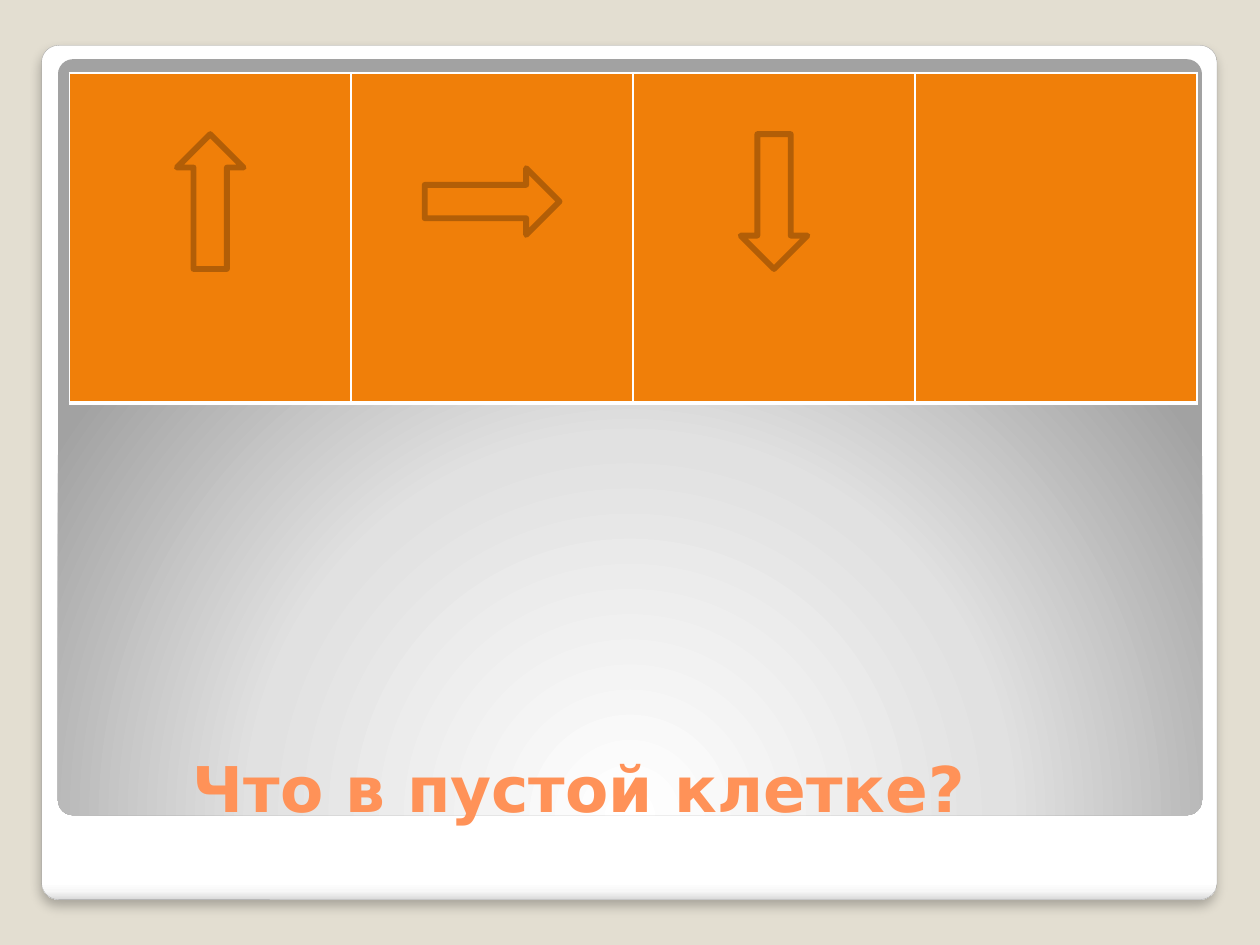
from dataclasses import dataclass

from lxml import etree
from pptx import Presentation
from pptx import util as u
from pptx.dml.color import RGBColor
from pptx.enum import shapes, text
from pptx.oxml.ns import qn


@dataclass(frozen=True)
class Theme:
    backdrop: str = "E3DED1"
    card_edge: str = "A4A4A4"
    card: tuple = ((0, "FFFFFF"), (98, "FFFFFF"), (99, "F7F7F7"), (100, "DADADA"))
    panel: tuple = ((0, "FFFFFF"), (55, "E1E1E1"), (100, "A2A2A2"))
    cell: str = "F07F09"
    border: str = "FFFFFF"
    arrow_edge: str = "B25E07"
    title: str = "FF9258"
    font: str = "DejaVu Sans"
    title_size: int = 36
    arrow_width: float = 3.35


def node(parent, tag, **attributes):
    return etree.SubElement(parent, qn(tag), {k: str(v) for k, v in attributes.items()})


class PuzzleSlide:
    """Places elements on a slide using a grid of 100 columns by 75 rows."""

    def __init__(self, deck, theme):
        self.theme = theme
        self.column, self.row = deck.slide_width / 100, deck.slide_height / 75
        self.slide = deck.slides.add_slide(deck.slide_layouts[5])
        self.backdrop = self.slide.background.fill
        self.backdrop.solid()
        self.backdrop.fore_color.rgb = RGBColor.from_string(theme.backdrop)

    def box(self, left, top, width, height):
        return (u.Emu(round(left * self.column)), u.Emu(round(top * self.row)),
                u.Emu(round(width * self.column)), u.Emu(round(height * self.row)))

    def shape(self, kind, place, fill=None, edge=None, edge_width=0):
        item = self.slide.shapes.add_shape(kind, *self.box(*place))
        item.shadow.inherit = False
        if fill:
            item.fill.solid()
            item.fill.fore_color.rgb = RGBColor.from_string(fill)
        else:
            item.fill.background()
        if edge:
            item.line.color.rgb = RGBColor.from_string(edge)
            item.line.width = u.Pt(edge_width)
        else:
            item.line.fill.background()
        return item

    def backing(self, place, stops, circular=False, edge=None, shadow=False):
        item = self.shape(shapes.MSO_SHAPE.ROUNDED_RECTANGLE, place,
                          edge=edge, edge_width=0.16)
        item.adjustments[0] = 0.02
        properties = item.element.spPr
        gradient = etree.Element(qn("a:gradFill"), rotWithShape="1")
        stop_list = node(gradient, "a:gsLst")
        for position, color in stops:
            node(node(stop_list, "a:gs", pos=position * 1000), "a:srgbClr", val=color)
        if circular:
            node(node(gradient, "a:path", path="circle"), "a:fillToRect",
                 l=50000, t=175000, r=50000, b=-75000)
        else:
            node(gradient, "a:lin", ang=5400000, scaled=0)
        properties.replace(properties.find(qn("a:noFill")), gradient)
        if shadow:
            cast = node(properties.find(qn("a:effectLst")), "a:outerShdw",
                        blurRad=u.Pt(6), dist=u.Pt(4), dir=5400000,
                        algn="t", rotWithShape=0)
            node(node(cast, "a:srgbClr", val="000000"), "a:alpha", val=25000)
        self.slide.shapes.title.element.addprevious(item.element)

    def title(self, wording, place, indent):
        heading = self.slide.shapes.title
        heading.left, heading.top, heading.width, heading.height = self.box(*place)
        frame = heading.text_frame
        frame.text = wording
        frame.word_wrap = True
        frame.auto_size = text.MSO_AUTO_SIZE.NONE
        frame.vertical_anchor = text.MSO_ANCHOR.BOTTOM
        frame.margin_left = u.Emu(round(indent * self.column))
        frame.paragraphs[0].alignment = text.PP_ALIGN.LEFT
        font = frame.paragraphs[0].runs[0].font
        font.name, font.size, font.bold = self.theme.font, u.Pt(self.theme.title_size), True
        font.color.rgb = RGBColor.from_string(self.theme.title)

    def cells(self, count, place):
        table = self.slide.shapes.add_table(1, count, *self.box(*place)).table
        for cell in table.iter_cells():
            cell.fill.solid()
            cell.fill.fore_color.rgb = RGBColor.from_string(self.theme.cell)
            properties = cell.fill._xPr
            for order, (side, width) in enumerate(zip("LRTB", (1, 1, 1, 3))):
                border = etree.Element(qn(f"a:ln{side}"), w=str(u.Pt(width)))
                node(node(border, "a:solidFill"), "a:srgbClr", val=self.theme.border)
                properties.insert(order, border)

    def arrow(self, kind, center, size):
        (x, y), (width, height) = center, size
        self.shape(kind, (x - width / 2, y - height / 2, width, height),
                   self.theme.cell, self.theme.arrow_edge, self.theme.arrow_width)


def main():
    deck = Presentation()
    deck.slide_width, deck.slide_height = u.Inches(10), u.Inches(7.5)
    theme = Theme()
    puzzle = PuzzleSlide(deck, theme)
    puzzle.backing((3.3, 3.6, 93.3, 67.8), theme.card, edge=theme.card_edge, shadow=True)
    puzzle.backing((4.6, 4.7, 90.8, 60), theme.panel, circular=True)
    left, width, count = 5.5, 89.5, 4
    puzzle.title("Что в пустой клетке?", (left, 54.5, width, 11.5), indent=9.8)
    puzzle.cells(count, (left, 5.8, width, 26.2))
    long, short = 10.7, 5.3
    arrows = ((shapes.MSO_SHAPE.UP_ARROW, (short, long)),
              (shapes.MSO_SHAPE.RIGHT_ARROW, (long, short)),
              (shapes.MSO_SHAPE.DOWN_ARROW, (short, long)))
    for position, (kind, size) in enumerate(arrows):
        puzzle.arrow(kind, (left + width / count * (position + 0.5), 16), size)
    deck.save("out.pptx")


if __name__ == "__main__":
    main()
